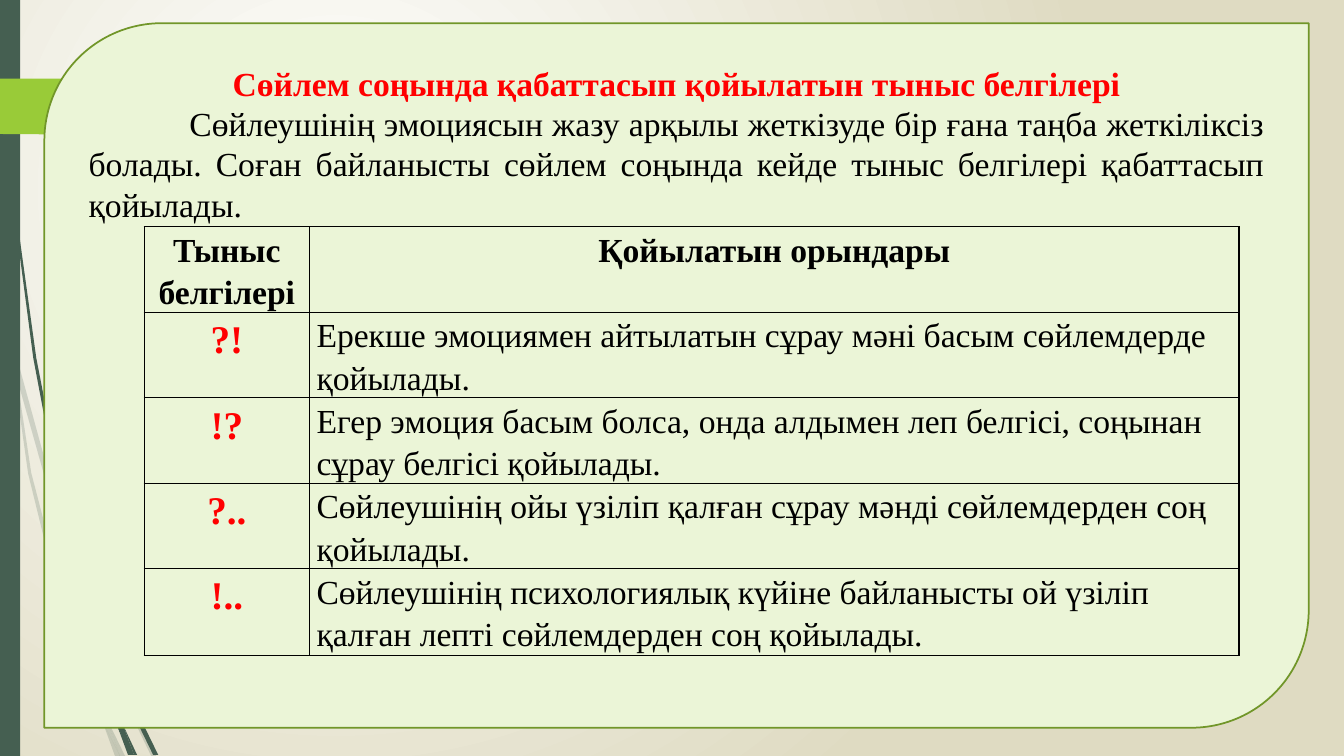
from dataclasses import dataclass

from lxml import etree
from pptx import Presentation
from pptx.dml.color import RGBColor
from pptx.enum.shapes import MSO_SHAPE
from pptx.enum.text import MSO_ANCHOR, PP_ALIGN
from pptx.oxml.ns import qn
from pptx.util import Inches, Pt

RECTANGLE = MSO_SHAPE.RECTANGLE
DIAGONAL_ROUNDED = MSO_SHAPE.ROUND_2_DIAG_RECTANGLE
TOP = MSO_ANCHOR.TOP
LEFT, CENTER, JUSTIFY = PP_ALIGN.LEFT, PP_ALIGN.CENTER, PP_ALIGN.JUSTIFY
FONT = "Times New Roman"
COLORS = {
    "glow": "FFFFFF", "sand": "DFDBC2", "forest": "455F51", "lime": "99CB38",
    "panel": "EBF5D7", "outline": "719629", "red": "FF0000", "black": "000000",
}


@dataclass(frozen=True)
class Outline:
    points: tuple
    color: str = "forest"
    opacity: int = 100


@dataclass(frozen=True)
class TextStyle:
    size: int = 24
    color: str = "black"
    bold: bool = False
    alignment: int = LEFT
    line_spacing: float = 1.0


@dataclass(frozen=True)
class Rule:
    mark: str
    usage: str


FAINT_STEMS = (
    Outline(((0.58, 5.22), (0.84, 5.99), (0.85, 5.86), (0.62, 5.2), (0.14, 3.45),
             (0.17, 3.76)), opacity=20),
    Outline(((0.92, 6.07), (0.88, 5.96), (0.88, 6.1), (1.23, 6.94), (1.5, 7.5),
             (1.55, 7.5), (1.27, 6.92)), opacity=20),
    Outline(((1.19, 7.5), (1.24, 7.5), (1.05, 7.11)), opacity=20),
    Outline(((0.93, 6.83), (0.7, 6.19), (0.31, 4.69), (0.17, 3.76), (0.11, 3.5),
             (0.28, 4.7), (0.65, 6.21), (0.92, 6.93), (1.01, 7.14), (0.99, 7.07)), opacity=20),
    Outline(((1.01, 7.14), (1.14, 7.5), (1.19, 7.5)), opacity=20),
    Outline(((0.96, 6.92), (0.93, 6.83), (0.99, 7.07), (1.01, 7.14), (1.19, 7.5),
             (1.05, 7.11)), opacity=20),
)
DARK_STEMS = (
    Outline(((0.07, 1.1), (0.17, 2.33), (0.33, 3.55), (0.56, 4.77), (0.57, 4.81),
             (0.55, 4.57), (0.55, 4.53), (0.36, 3.55), (0.19, 2.32), (0.08, 1.09),
             (0.05, 0.48), (0.04, 0), (0.03, 0), (0.04, 0.48))),
    Outline(((1.13, 6.49), (1.1, 6.41), (1.11, 6.56), (1.32, 7.08), (1.52, 7.49),
             (1.57, 7.49), (1.36, 7.06))),
    Outline(((1.33, 7.49), (1.36, 7.49), (1.22, 7.19))),
    Outline(((1.17, 7.22), (1.27, 7.49), (1.31, 7.49))),
    Outline(((1.16, 7.06), (1.1, 6.91), (1.16, 7.17), (1.17, 7.22), (1.3, 7.49),
             (1.33, 7.49), (1.22, 7.19))),
)
ARROW_TAB = Outline(((0, 0.78), (1.46, 0.78), (1.48, 0.79), (1.73, 1.04), (1.74, 1.06),
                     (1.73, 1.08), (1.48, 1.33), (1.46, 1.34), (0, 1.33)), "lime")

TITLE = "Сөйлем соңында қабаттасып қойылатын тыныс белгілері"
INTRODUCTION = (
    "Сөйлеушінің эмоциясын жазу арқылы жеткізуде бір ғана таңба жеткіліксіз болады. "
    "Соған байланысты сөйлем соңында кейде тыныс белгілері қабаттасып қойылады."
)
HEADER = Rule("Тыныс белгілері", "Қойылатын орындары")
RULES = (
    Rule("?!", "Ерекше эмоциямен айтылатын сұрау мәні басым сөйлемдерде қойылады."),
    Rule("!?", "Егер эмоция басым болса, онда алдымен леп белгісі, соңынан сұрау белгісі "
               "қойылады."),
    Rule("?..", "Сөйлеушінің ойы үзіліп қалған сұрау мәнді сөйлемдерден соң қойылады."),
    Rule("!..", "Сөйлеушінің психологиялық күйіне байланысты ой үзіліп қалған лепті "
                "сөйлемдерден соң қойылады."),
)
TITLE_STYLE = TextStyle(color="red", bold=True, alignment=CENTER)
INTRODUCTION_STYLE = TextStyle(alignment=JUSTIFY)
HEADER_STYLE = TextStyle(bold=True, alignment=CENTER, line_spacing=1.15)
MARK_STYLE = TextStyle(28, "red", True, CENTER, 1.15)
USAGE_STYLE = TextStyle(line_spacing=1.15)


def rgb(name: str) -> RGBColor:
    return RGBColor.from_string(COLORS[name])


def paint_background(slide) -> None:
    fill = slide.background.fill
    fill.gradient()
    for stop, name in zip(fill.gradient_stops, ("glow", "sand")):
        stop.color.rgb = rgb(name)
    gradient = slide.background._cSld.find(".//" + qn("a:gradFill"))
    linear = gradient.find(qn("a:lin"))
    circle = etree.Element(qn("a:path"), {"path": "circle"})
    etree.SubElement(circle, qn("a:fillToRect"),
                     {"l": "50000", "t": "50000", "r": "100000", "b": "100000"})
    gradient.replace(linear, circle)


def fill_shape(shape, color: str) -> None:
    shape.shadow.inherit = False
    shape.fill.solid()
    shape.fill.fore_color.rgb = rgb(color)
    shape.line.fill.background()


def draw_outline(slide, outline: Outline) -> None:
    first, *others = [(Inches(x), Inches(y)) for x, y in outline.points]
    builder = slide.shapes.build_freeform(*first)
    builder.add_line_segments(others, close=True)
    shape = builder.convert_to_shape()
    fill_shape(shape, outline.color)
    if outline.opacity < 100:
        color = shape._element.spPr.find(qn("a:solidFill"))[0]
        etree.SubElement(color, qn("a:alpha"), {"val": str(outline.opacity * 1000)})


def write_paragraph(paragraph, text: str, style: TextStyle) -> None:
    paragraph.text = text
    paragraph.alignment = style.alignment
    paragraph.line_spacing = style.line_spacing
    paragraph.font.name = FONT
    paragraph.font.size = Pt(style.size)
    paragraph.font.bold = style.bold
    paragraph.font.color.rgb = rgb(style.color)


def draw_panel(slide) -> None:
    panel = slide.shapes.add_shape(DIAGONAL_ROUNDED, Inches(0.44), Inches(0.23),
                                   Inches(12.54), Inches(6.99))
    fill_shape(panel, "panel")
    panel.line.color.rgb = rgb("outline")
    panel.line.width = Pt(1.25)
    frame = panel.text_frame
    frame.word_wrap = True
    frame.vertical_anchor = TOP
    write_paragraph(frame.paragraphs[0], TITLE, TITLE_STYLE)
    introduction = frame.add_paragraph()
    write_paragraph(introduction, INTRODUCTION, INTRODUCTION_STYLE)
    introduction._p.get_or_add_pPr().set("indent", str(Inches(1)))


def write_cell(cell, text: str, style: TextStyle) -> None:
    cell.margin_left = cell.margin_right = Inches(0.07)
    cell.margin_top = cell.margin_bottom = 0
    write_paragraph(cell.text_frame.paragraphs[0], text, style)
    properties = cell._tc.get_or_add_tcPr()
    for side in ("lnL", "lnR", "lnT", "lnB"):
        border = etree.SubElement(properties, qn(f"a:{side}"), {"w": str(Pt(1))})
        solid = etree.SubElement(border, qn("a:solidFill"))
        etree.SubElement(solid, qn("a:srgbClr"), {"val": COLORS["black"]})
    cell.fill.background()


def draw_table(slide) -> None:
    table = slide.shapes.add_table(len(RULES) + 1, 2, Inches(1.43), Inches(2.25),
                                   Inches(10.86), Inches(4.02)).table
    table.first_row = table.horz_banding = False
    for column, width in zip(table.columns, (1.64, 9.22)):
        column.width = Inches(width)
    for row, height in zip(table.rows, (0.79, 0.79, 0.79, 0.79, 0.86)):
        row.height = Inches(height)
    for index, rule in enumerate((HEADER, *RULES)):
        mark_style, usage_style = (MARK_STYLE, USAGE_STYLE) if index else (HEADER_STYLE,) * 2
        write_cell(table.cell(index, 0), rule.mark, mark_style)
        write_cell(table.cell(index, 1), rule.usage, usage_style)


def main() -> None:
    """Build the slide on doubled punctuation marks and save it."""
    presentation = Presentation()
    presentation.slide_width = Inches(13.33)
    presentation.slide_height = Inches(7.5)
    slide = presentation.slides.add_slide(presentation.slide_layouts[6])
    paint_background(slide)
    for stem in FAINT_STEMS + DARK_STEMS:
        draw_outline(slide, stem)
    bar = slide.shapes.add_shape(RECTANGLE, 0, 0, Inches(0.2), Inches(7.5))
    fill_shape(bar, "forest")
    draw_outline(slide, ARROW_TAB)
    draw_panel(slide)
    draw_table(slide)
    presentation.save("out.pptx")


if __name__ == "__main__":
    main()
